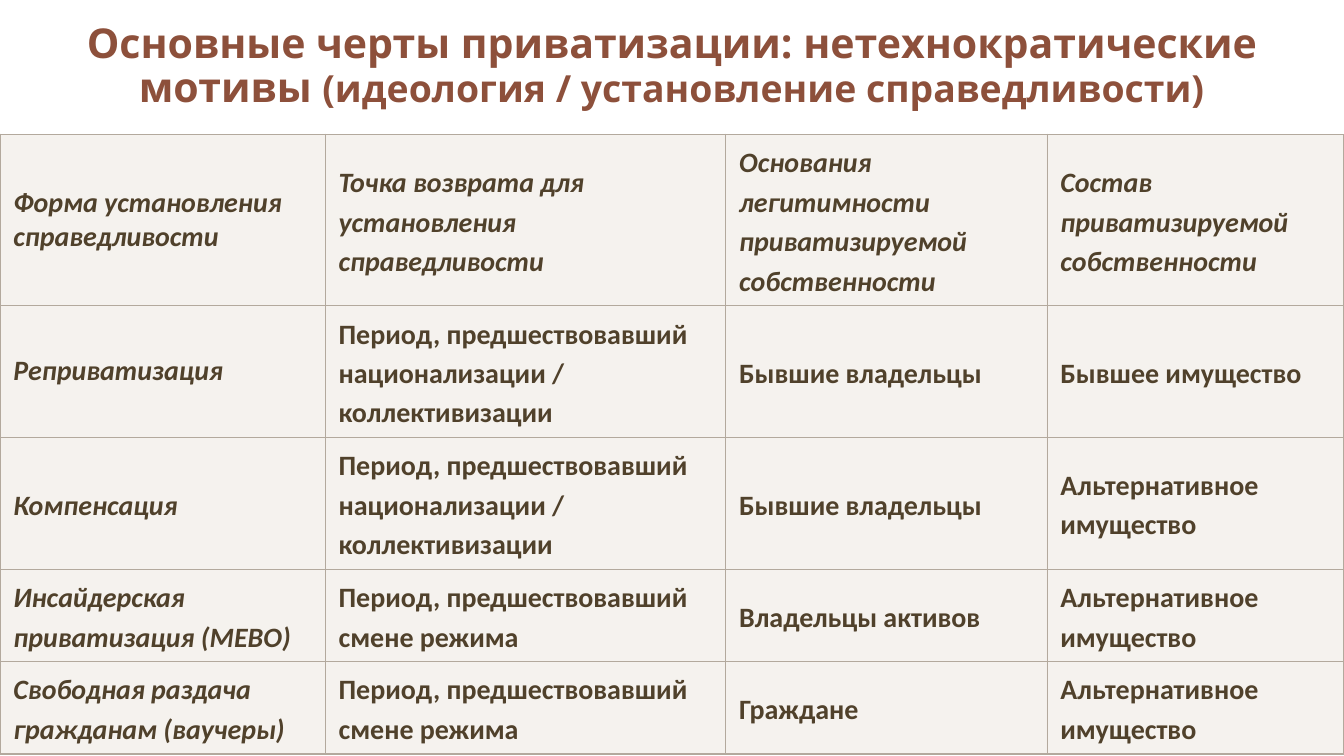
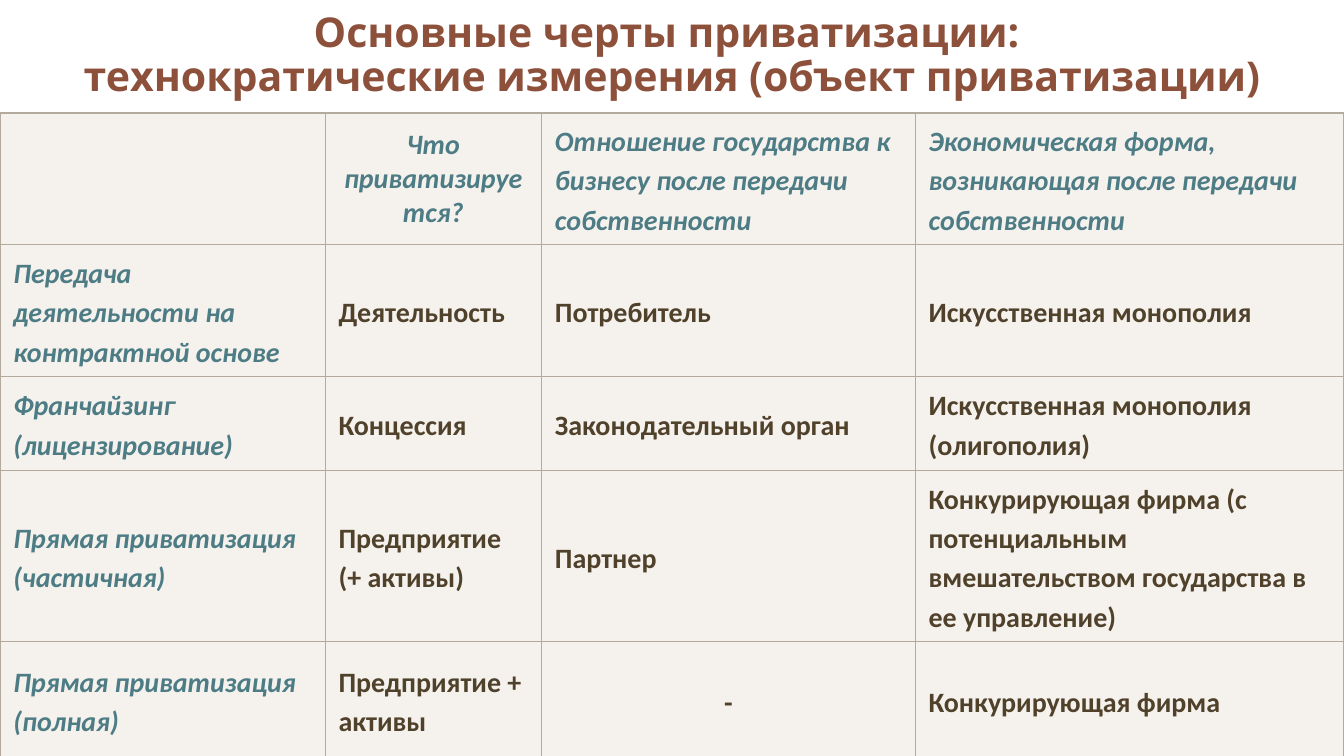
from lxml import etree
from pptx import Presentation
from pptx.dml.color import RGBColor
from pptx.enum.text import MSO_ANCHOR, MSO_AUTO_SIZE, PP_ALIGN
from pptx.oxml.ns import qn
from pptx.util import Pt

MIDDLE = MSO_ANCHOR.MIDDLE
CENTER = PP_ALIGN.CENTER
NO_AUTOFIT = MSO_AUTO_SIZE.NONE
TITLE_ONLY = 5

RUST = RGBColor(0x8D, 0x50, 0x3B)
BROWN = RGBColor(0x50, 0x41, 0x2B)
TEAL = RGBColor(0x4D, 0x7C, 0x85)
SAND = RGBColor(0xEF, 0xEA, 0xE4)
BORDER = RGBColor(0xB3, 0xA9, 0x9D)

WIDTH, HEIGHT = 720, 405
TITLE_LEFT = 8.6

BEFORE_NATIONALIZATION = "Период, предшествовавший национализации / коллективизации"
BEFORE_REGIME_CHANGE = "Период, предшествовавший смене режима"
FORMER_OWNERS = "Бывшие владельцы"
OTHER_PROPERTY = "Альтернативное имущество"

# Each title is a list of lines; each line is a list of (text, size)
PAGES = [
    {
        "title": [[("Основные черты приватизации: нетехнократические мотивы ", 22),
                   ("(идеология / установление справедливости)", 20)]],
        "top": 72,
        "height": 325.4,
        "label_color": BROWN,
        "columns": [174.2, 214.6, 172.1, 159.1],
        "row_heights": [90, 69.1, 69.1, 49, 48.2],
        "rows": [
            ["Форма установления справедливости",
             "Точка возврата для установления справедливости",
             "Основания легитимности приватизируемой собственности",
             "Состав приватизируемой собственности"],
            ["Реприватизация", BEFORE_NATIONALIZATION, FORMER_OWNERS, "Бывшее имущество"],
            ["Компенсация", BEFORE_NATIONALIZATION, FORMER_OWNERS, OTHER_PROPERTY],
            ["Инсайдерская приватизация (MEBO)", BEFORE_REGIME_CHANGE,
             "Владельцы активов", OTHER_PROPERTY],
            ["Свободная раздача гражданам (ваучеры)", BEFORE_REGIME_CHANGE,
             "Граждане", OTHER_PROPERTY],
        ],
        "single_spaced": [(0, 0), (1, 0)],
        "centered": [],
    },
    {
        "title": [[("Основные черты приватизации: ", 22)],
                  [("технократические измерения (объект приватизации)", 22)]],
        "top": 60.5,
        "height": 338.4,
        "label_color": TEAL,
        "columns": [174.2, 115.9, 200.2, 229.7],
        "row_heights": [51.1, 66.2, 50.4, 88.6, 62.6],
        "rows": [
            ["", "Что приватизируется?",
             "Отношение государства к бизнесу после передачи собственности",
             "Экономическая форма, возникающая после передачи собственности"],
            ["Передача деятельности на контрактной основе", "Деятельность",
             "Потребитель", "Искусственная монополия"],
            ["Франчайзинг (лицензирование)", "Концессия", "Законодательный орган",
             "Искусственная монополия (олигополия)"],
            ["Прямая приватизация (частичная)", "Предприятие (+ активы)", "Партнер",
             "Конкурирующая фирма (с потенциальным вмешательством государства "
             "в ее управление)"],
            ["Прямая приватизация (полная)", "Предприятие + активы", "-",
             "Конкурирующая фирма"],
        ],
        "single_spaced": [(0, 1)],
        "centered": [(0, 1), (4, 2)],
    },
]


def add_span(para, text, color, **formats):
    span = para.add_run()
    span.text = text
    span.font.color.rgb = color
    for name, value in formats.items():
        setattr(span.font, name, value)


def style_cell(cell, outer_sides):
    """Give a cell its translucent fill and borders, heavier on the outer sides."""
    cell.vertical_anchor = MIDDLE
    cell.fill.solid()
    cell.fill.fore_color.rgb = SAND
    properties = cell._tc.get_or_add_tcPr()
    tint = properties.find(qn("a:solidFill")).find(qn("a:srgbClr"))
    etree.SubElement(tint, qn("a:alpha"), val="60000")
    for index, side in enumerate("LRTB"):
        width = Pt(1 if side in outer_sides else 0.5)
        line = etree.Element(qn(f"a:ln{side}"), w=str(width))
        fill = etree.SubElement(line, qn("a:solidFill"))
        etree.SubElement(fill, qn("a:srgbClr"), val=str(BORDER))
        properties.insert(index, line)


deck = Presentation()
deck.slide_width, deck.slide_height = Pt(WIDTH), Pt(HEIGHT)

for content in PAGES:
    page = deck.slides.add_slide(deck.slide_layouts[TITLE_ONLY])

    # Title
    title = page.shapes.title
    title.left, title.top = Pt(TITLE_LEFT), Pt(0)
    title.width, title.height = Pt(WIDTH - 2 * TITLE_LEFT), Pt(content["top"])
    frame = title.text_frame
    for name, value in {"word_wrap": True, "auto_size": NO_AUTOFIT,
                        "vertical_anchor": MIDDLE}.items():
        setattr(frame, name, value)
    para = frame.paragraphs[0]
    para.alignment = CENTER
    para.line_spacing = 0.9
    for number, line_spans in enumerate(content["title"]):
        if number:
            para.add_line_break()
        for text, size in line_spans:
            add_span(para, text, RUST, name="Open Sans", size=Pt(size), bold=True)

    # Table
    rows, columns = content["rows"], content["columns"]
    last_row, last_column = len(rows) - 1, len(columns) - 1
    holder = page.shapes.add_table(len(rows), len(columns), Pt(0), Pt(content["top"]),
                                   Pt(WIDTH), Pt(content["height"]))
    table = holder.table
    table.first_row = table.horz_banding = False
    for column, width in zip(table.columns, columns):
        column.width = Pt(width)
    for row, height in zip(table.rows, content["row_heights"]):
        row.height = Pt(height)
    holder.height = Pt(content["height"])

    # Cells
    for r, texts in enumerate(rows):
        for c, text in enumerate(texts):
            cell = table.cell(r, c)
            edges = {"L": c == 0, "R": c == last_column, "T": r == 0, "B": r == last_row}
            style_cell(cell, [side for side, outer in edges.items() if outer])
            if not text:
                continue
            para = cell.text_frame.paragraphs[0]
            if (r, c) not in content["single_spaced"]:
                para.line_spacing = 1.15
                para.space_after = Pt(10)
            if (r, c) in content["centered"]:
                para.alignment = CENTER
            is_label = r == 0 or c == 0
            add_span(para, text, content["label_color"] if is_label else BROWN,
                     name="Calibri", size=Pt(15), bold=True, italic=is_label)

deck.save("out.pptx")
